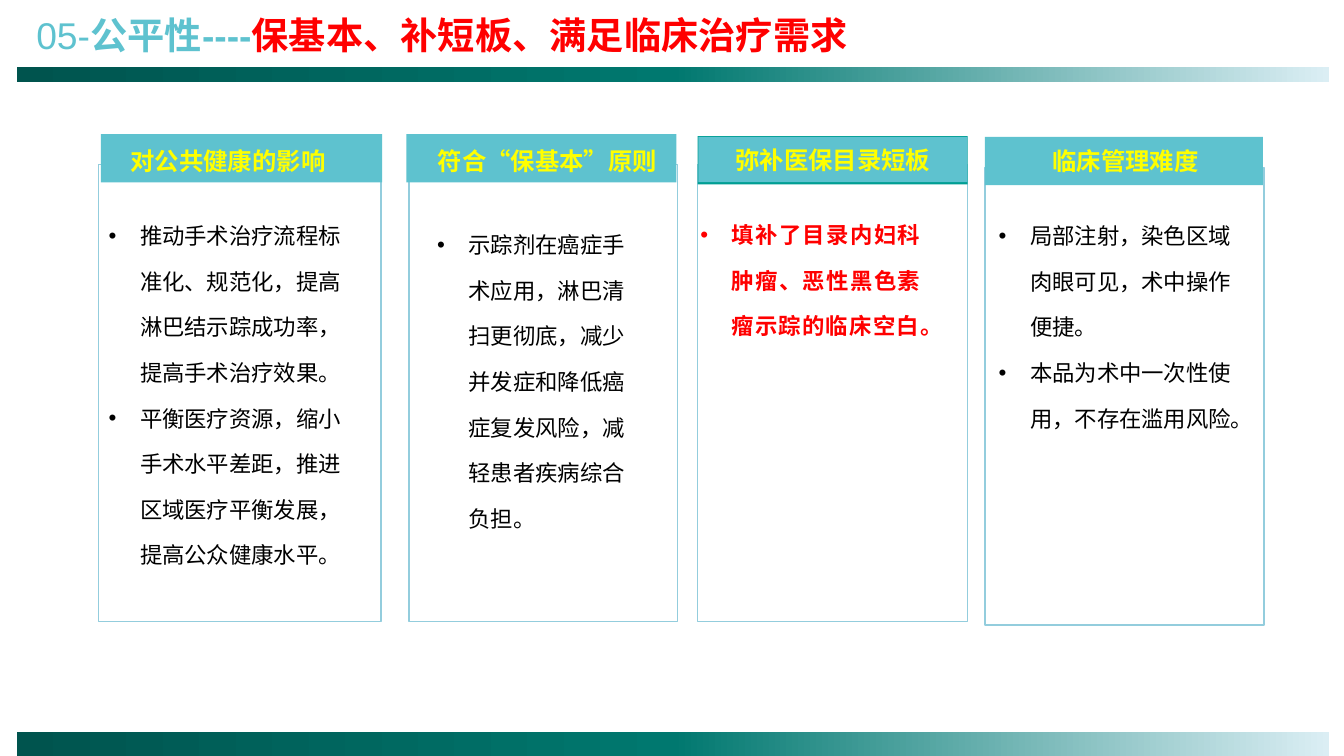
from copy import deepcopy

from lxml import etree
from pptx import Presentation
from pptx.dml.color import RGBColor
from pptx.enum.lang import MSO_LANGUAGE_ID
from pptx.enum.shapes import MSO_SHAPE
from pptx.enum.text import MSO_ANCHOR, PP_ALIGN
from pptx.oxml.ns import qn
from pptx.util import Cm, Pt

RECT = MSO_SHAPE.RECTANGLE
TOP, MIDDLE = MSO_ANCHOR.TOP, MSO_ANCHOR.MIDDLE
LEFT, CENTER, JUSTIFY = PP_ALIGN.LEFT, PP_ALIGN.CENTER, PP_ALIGN.JUSTIFY
CHINESE = MSO_LANGUAGE_ID.SIMPLIFIED_CHINESE

AQUA = RGBColor(0x5E, 0xC2, 0xCF)
GREEN = RGBColor(0x00, 0x9E, 0x93)
SKY = RGBColor(0x93, 0xCD, 0xDD)
YELLOW = RGBColor(0xFF, 0xFF, 0x00)
RED = RGBColor(0xFF, 0x00, 0x00)
BLACK = RGBColor(0x00, 0x00, 0x00)
FADE = [
    (0, RGBColor(0x00, 0x54, 0x4E)),
    (0.5, RGBColor(0x00, 0x78, 0x6F)),
    (1, RGBColor(0xDB, 0xEE, 0xF4)),
]

HEAD = {"size": Pt(17.4), "bold": True, "color": YELLOW}
BODY = {"size": Pt(16), "bold": False, "color": BLACK}
ALERT = BODY | {"bold": True, "color": RED}
TITLE = {"size": Pt(26.6), "bold": False, "color": AQUA}
TITLE_RUNS = [
    ("05-", TITLE),
    ("公平性----", TITLE | {"bold": True}),
    ("保基本、补短板、满足临床治疗需求", TITLE | {"bold": True, "color": RED}),
]

# Each place is left, top, width, height in centimetres.
CARDS = [
    {
        "frame": (10.31, 4.14, 6.76, 11.53),
        "band": (10.24, 3.38, 6.81, 1.22),
        "label": (10.52, 3.48, 6.55, 1.14),
        "body": (10.77, 5.23, 5.28, 7.21),
        "head": "符合“保基本”原则",
        "points": ["示踪剂在癌症手术应用，淋巴清扫更彻底，减少并发症和降低癌症复发风险，"
                   "减轻患者疾病综合负担。"],
    },
    {
        "frame": (17.58, 4.14, 6.81, 11.53),
        "band": (17.58, 3.43, 6.81, 1.22),
        "label": (17.6, 3.45, 6.78, 1.14),
        "body": (17.4, 4.98, 6.05, 3.73),
        "head": "弥补医保目录短板",
        "points": ["填补了目录内妇科肿瘤、恶性黑色素瘤示踪的临床空白。"],
        "color": GREEN,
        "cover": AQUA,
        "style": ALERT,
        "align": JUSTIFY,
    },
    {
        "frame": (2.49, 4.14, 7.11, 11.53),
        "band": (2.54, 3.38, 7.09, 1.22),
        "label": (2.62, 3.48, 6.25, 1.14),
        "body": (2.49, 5, 6.76, 10.44),
        "head": "对公共健康的影响",
        "points": ["推动手术治疗流程标准化、规范化，提高淋巴结示踪成功率，提高手术治疗效果。",
                   "平衡医疗资源，缩小手术水平差距，推进区域医疗平衡发展，提高公众健康水平。"],
    },
    {
        "frame": (24.82, 4.22, 7.04, 11.53),
        "band": (24.82, 3.45, 7.01, 1.22),
        "label": (25.17, 3.48, 6.25, 1.14),
        "body": (24.92, 5, 6.55, 6.07),
        "head": " 临床管理难度",
        "points": ["局部注射，染色区域肉眼可见，术中操作便捷。",
                   "本品为术中一次性使用，不存在滥用风险。"],
    },
]


def lengths(place):
    return [Cm(value) for value in place]


def add_run(para, text, style):
    run = para.add_run()
    run.text = text
    values = {"name": "Arial", "language_id": CHINESE} | style
    color = values.pop("color")
    for name, value in values.items():
        setattr(run.font, name, value)
    run.font.color.rgb = color


def add_rect(slide, place, fill=None, line=None):
    rect = slide.shapes.add_shape(RECT, *lengths(place))
    rect.shadow.inherit = False
    if fill:
        rect.fill.solid()
        rect.fill.fore_color.rgb = fill
    else:
        rect.fill.background()
    if line:
        rect.line.color.rgb = line
        rect.line.width = Pt(1)
    else:
        rect.line.fill.background()
    return rect


def add_bar(slide, place):
    """Add a bar that fades from dark green to pale blue."""
    bar = add_rect(slide, place)
    bar.fill.gradient()
    bar.fill.gradient_angle = 0
    stops = bar._element.spPr.find(qn("a:gradFill")).find(qn("a:gsLst"))
    stops.append(deepcopy(stops[-1]))
    for stop, (spot, color) in zip(bar.fill.gradient_stops, FADE):
        stop.position = spot
        stop.color.rgb = color


def add_box(slide, place, anchor):
    box = slide.shapes.add_textbox(*lengths(place))
    box.text_frame.word_wrap = True
    box.text_frame.vertical_anchor = anchor
    return box


def add_bullet(para):
    props = para._p.get_or_add_pPr()
    props.set("marL", str(Cm(0.79)))
    props.set("indent", str(-Cm(0.79)))
    etree.SubElement(props, qn("a:buFont")).set("typeface", "Arial")
    etree.SubElement(props, qn("a:buChar")).set("char", "•")


def add_list(slide, place, points, style, align):
    frame = add_box(slide, place, TOP).text_frame
    for index, point in enumerate(points):
        para = frame.add_paragraph() if index else frame.paragraphs[0]
        para.alignment = align
        para.line_spacing = 1.7
        add_bullet(para)
        add_run(para, point, style)


def add_card(slide, card):
    add_rect(slide, card["frame"], line=SKY)
    add_rect(slide, card["band"], card.get("color", AQUA))
    label = add_box(slide, card["label"], MIDDLE)
    if "cover" in card:
        label.fill.solid()
        label.fill.fore_color.rgb = card["cover"]
    para = label.text_frame.paragraphs[0]
    para.alignment = CENTER
    add_run(para, card["head"], HEAD)
    add_list(slide, card["body"], card["points"],
             card.get("style", BODY), card.get("align", LEFT))


def set_title(slide):
    title = slide.shapes.title
    title.left, title.top, title.width, title.height = lengths((0.66, 0.18, 25.12, 1.4))
    title.text_frame.vertical_anchor = TOP
    para = title.text_frame.paragraphs[0]
    para.alignment = LEFT
    for text, style in TITLE_RUNS:
        add_run(para, text, style)


def main():
    deck = Presentation()
    deck.slide_width, deck.slide_height = Cm(33.87), Cm(19.05)
    slide = deck.slides.add_slide(deck.slide_layouts[5])
    set_title(slide)
    for top, height in ((1.7, 0.36), (18.44, 0.69)):
        add_bar(slide, (0.43, top, 33.07, height))
    for card in CARDS:
        add_card(slide, card)
    deck.save("out.pptx")


if __name__ == "__main__":
    main()
